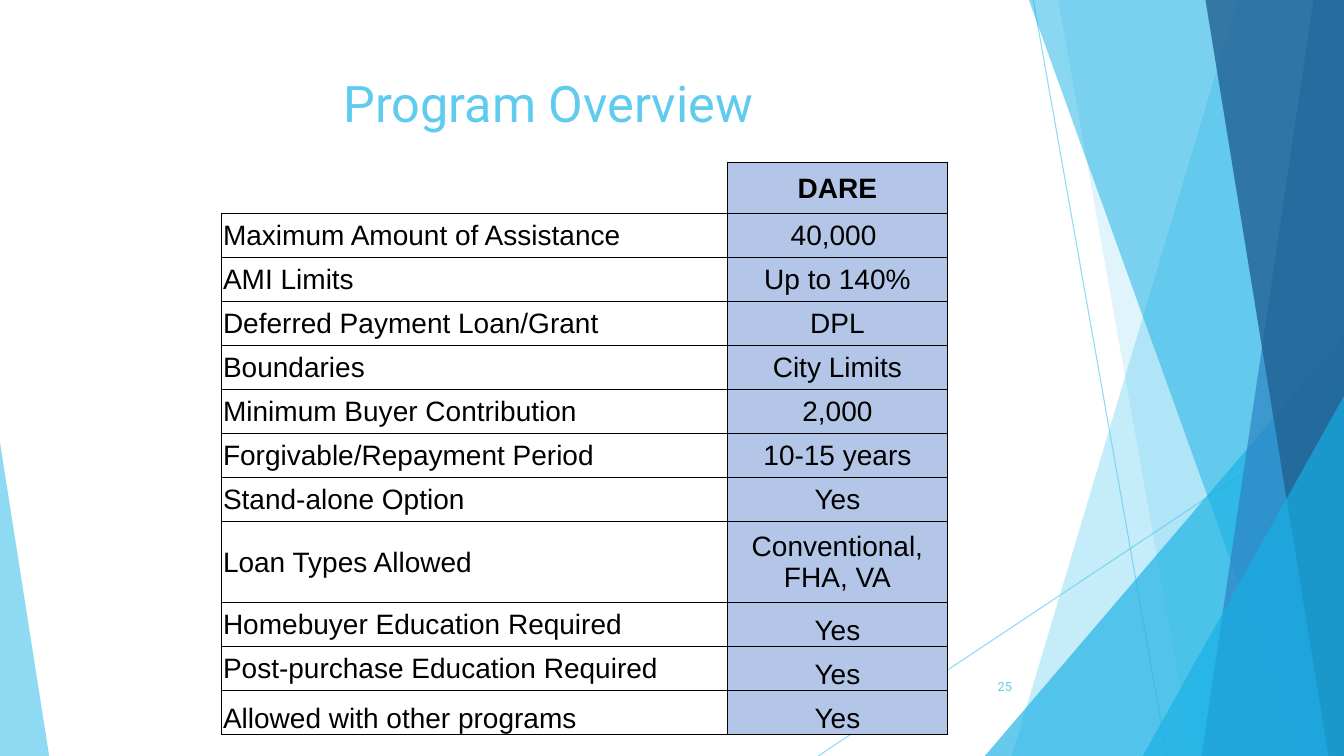
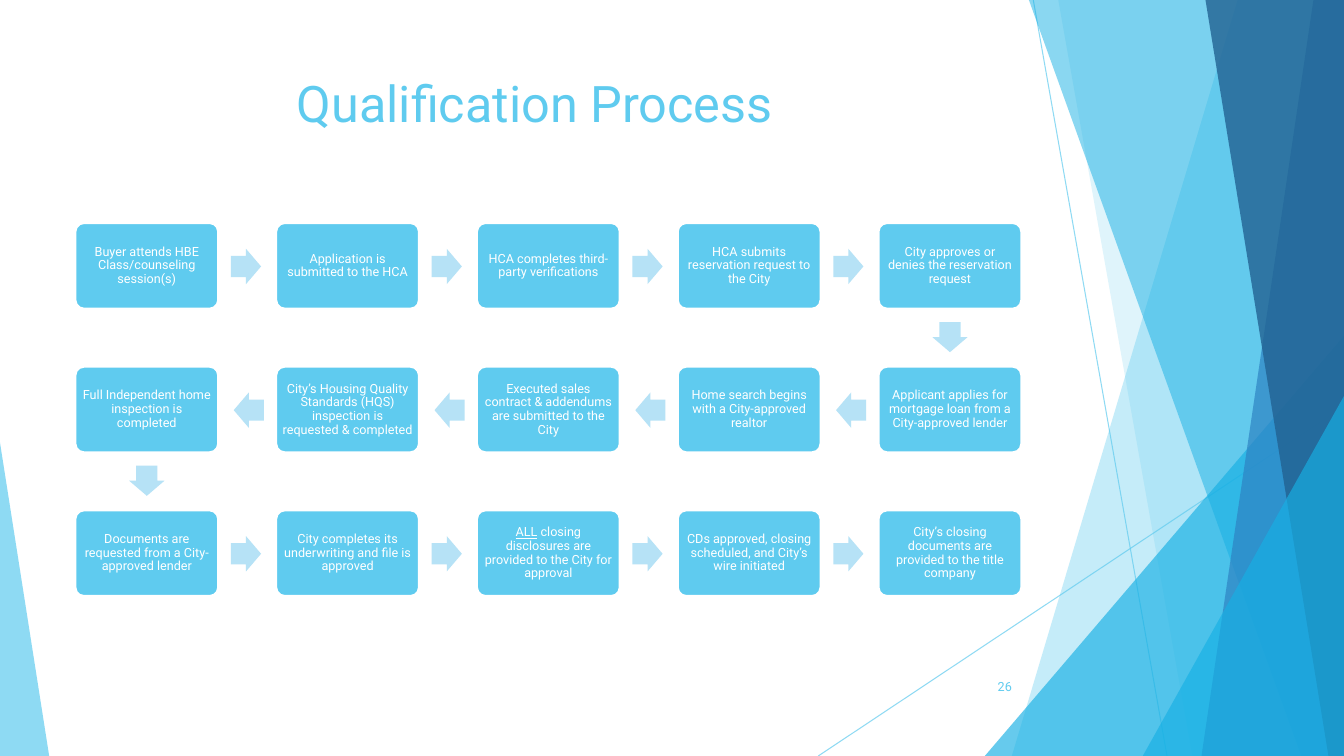
"""Builds the program overview table and the qualification process flow."""
import lxml.etree
import pptx
import pptx.dml.color
import pptx.enum.shapes
import pptx.enum.text
import pptx.oxml.ns
import pptx.util

Cm = pptx.util.Cm
Pt = pptx.util.Pt
RGBColor = pptx.dml.color.RGBColor
SHAPE = pptx.enum.shapes.MSO_SHAPE
ALIGN = pptx.enum.text.PP_ALIGN
ANCHOR = pptx.enum.text.MSO_ANCHOR
qn = pptx.oxml.ns.qn

SKY = RGBColor(0x5F, 0xCB, 0xEF)
CYAN = RGBColor(0x17, 0xB0, 0xE4)
BLUE = RGBColor(0x2E, 0x83, 0xC3)
NAVY = RGBColor(0x22, 0x62, 0x92)
PALE = RGBColor(0xB6, 0xE2, 0xF6)
PERIWINKLE = RGBColor(0xB4, 0xC6, 0xE7)
WHITE = RGBColor(0xFF, 0xFF, 0xFF)
BLACK = RGBColor(0, 0, 0)
WIDTH, HEIGHT = 33.87, 19.05


def paint(shape, color, opacity=100):
    """Give a shape a flat fill without outline or shadow."""
    shape.shadow.inherit = False
    shape.fill.solid()
    shape.fill.fore_color.rgb = color
    shape.line.fill.background()
    if opacity < 100:
        tint = shape.element.spPr.find(".//" + qn("a:srgbClr"))
        lxml.etree.SubElement(tint, qn("a:alpha"), val=str(opacity * 1000))


def write(frame, text, size, color, align, font="Roboto"):
    """Fill a text frame with one styled paragraph and return it."""
    frame.word_wrap = True
    paragraph = frame.paragraphs[0]
    paragraph.alignment = align
    paragraph.font.size = Pt(size)
    paragraph.font.name = font
    paragraph.font.color.rgb = color
    if text.startswith("ALL "):
        paragraph.add_run().text = "ALL"
        paragraph.runs[0].font.underline = True
        text = text[3:]
    paragraph.add_run().text = text
    return paragraph


deck = pptx.Presentation()
deck.slide_width, deck.slide_height = Cm(WIDTH), Cm(HEIGHT)

RAYS = [(26.04, 0, 29.41, HEIGHT), (WIDTH, 10.24, 20.62, HEIGHT)]
FACETS = [
    (31.19, 0, 25.5, SKY, 36),
    (26.67, 0, 30.05, SKY, 20),
    (24.82, 8.46, 24.82, CYAN, 66),
    (25.93, 0, 32.79, CYAN, 50),
    (33.1, 0, 30.28, BLUE, 70),
    (30.38, 0, 33.48, NAVY, 80),
    (28.8, 9.98, 28.8, CYAN, 66),
]
PAGES = [("Program Overview", 1.88, "25"), ("Qualification Process", 1.54, "26")]

for title, title_left, number in PAGES:
    slide = deck.slides.add_slide(deck.slide_layouts[6])
    shapes = slide.shapes
    for ends in RAYS:
        ray = shapes.add_connector(
            pptx.enum.shapes.MSO_CONNECTOR.STRAIGHT, *[Cm(end) for end in ends])
        ray.line.color.rgb = SKY
        ray.line.width = Pt(0.75)
        tint = ray.element.spPr.find(".//" + qn("a:srgbClr"))
        lxml.etree.SubElement(tint, qn("a:alpha"), val="70000")
        lxml.etree.SubElement(ray.element.spPr, qn("a:effectLst"))
    for top_x, top, foot_x, color, opacity in FACETS:
        if top:
            facet = shapes.add_shape(SHAPE.ISOSCELES_TRIANGLE, Cm(foot_x), Cm(top),
                                     Cm(WIDTH - foot_x), Cm(HEIGHT - top))
            facet.adjustments[0] = 1
        else:
            outline = shapes.build_freeform(Cm(top_x), 0)
            outline.add_line_segments([(Cm(WIDTH), 0), (Cm(WIDTH), Cm(HEIGHT)),
                                       (Cm(foot_x), Cm(HEIGHT))])
            facet = outline.convert_to_shape()
        paint(facet, color, opacity)
    wedge = shapes.add_shape(SHAPE.ISOSCELES_TRIANGLE, 0, Cm(11.15),
                             Cm(1.24), Cm(HEIGHT - 11.15))
    wedge.adjustments[0] = 0
    paint(wedge, SKY, 70)

    heading = shapes.add_textbox(Cm(title_left), Cm(1.7), Cm(23.88), Cm(3.66))
    write(heading.text_frame, title, 36, SKY, ALIGN.CENTER)
    page_number = shapes.add_textbox(Cm(23.85), Cm(16.79), Cm(1.9), Cm(1.02))
    write(page_number.text_frame, number, 9, SKY, ALIGN.RIGHT)
    page_number.text_frame.vertical_anchor = ANCHOR.MIDDLE

overview, process = deck.slides

TERMS = [
    ("", "DARE"),
    ("Maximum Amount of Assistance", "40,000 "),
    ("AMI Limits", "Up to 140%"),
    ("Deferred Payment Loan/Grant", "DPL"),
    ("Boundaries", "City Limits"),
    ("Minimum Buyer Contribution", "2,000"),
    ("Forgivable/Repayment Period", "10-15 years"),
    ("Stand-alone Option", "Yes"),
    ("Loan Types Allowed", "Conventional, FHA, VA"),
    ("Homebuyer Education Required", "Yes"),
    ("Post-purchase Education Required", "Yes"),
    ("Allowed with other programs", "Yes"),
]
ROW_HEIGHTS = {0: 1.28, 8: 2.04}
BOTTOM_CELLS = {(9, 1), (10, 1), (11, 0), (11, 1)}

terms_frame = overview.shapes.add_table(
    len(TERMS), 2, Cm(5.59), Cm(4.09), Cm(18.28), Cm(14.42))
terms_frame.element.find(".//" + qn("a:tableStyleId")).text = (
    "{2D5ABB26-0587-4C30-8999-92F81FD0307C}")
terms = terms_frame.table
terms.first_row = terms.horz_banding = False
terms.columns[0].width, terms.columns[1].width = Cm(12.75), Cm(5.53)

for row, texts in enumerate(TERMS):
    terms.rows[row].height = Cm(ROW_HEIGHTS.get(row, 1.11))
    for column, text in enumerate(texts):
        cell = terms.cell(row, column)
        cell.margin_left = cell.margin_right = cell.margin_top = Cm(0.03)
        cell.margin_bottom = 0
        cell.vertical_anchor = (
            ANCHOR.BOTTOM if (row, column) in BOTTOM_CELLS else ANCHOR.MIDDLE)
        for side in "LRTB" if text else "RB":
            border = lxml.etree.SubElement(
                cell._tc.get_or_add_tcPr(), qn("a:ln" + side), w=str(Pt(1)))
            ink = lxml.etree.SubElement(border, qn("a:solidFill"))
            lxml.etree.SubElement(ink, qn("a:srgbClr"), val=str(BLACK))
        if column:
            cell.fill.solid()
            cell.fill.fore_color.rgb = PERIWINKLE
        else:
            cell.fill.background()
        if text:
            entry = write(cell.text_frame, text, 20, BLACK,
                          ALIGN.CENTER if column else ALIGN.LEFT, "Arial")
            entry.font.bold = row == 0

STEPS = [
    "Buyer attends HBE Class/counseling session(s)",
    "Application is submitted to the HCA",
    "HCA completes third-party verifications",
    "HCA submits reservation request to the City",
    "City approves or denies the reservation request",
    "Applicant applies for mortgage loan from a City-approved lender",
    "Home search begins with a City-approved realtor",
    "Executed sales contract & addendums are submitted to the City",
    "City’s Housing Quality Standards (HQS) inspection is requested & completed",
    "Full Independent home inspection is completed",
    "Documents are requested from a City- approved lender",
    "City completes its underwriting and file is approved",
    "ALL closing disclosures are provided to the City for approval",
    "CDs approved, closing scheduled, and City’s wire initiated",
    "City’s closing documents are provided to the title company",
]
PER_ROW = 5

for index, text in enumerate(STEPS):
    row, place = divmod(index, PER_ROW)
    leftward = row % 2 == 1
    column = PER_ROW - 1 - place if leftward else place
    left, top = 1.9 + 5.06 * column, 5.62 + 3.62 * row

    step = process.shapes.add_shape(
        SHAPE.ROUNDED_RECTANGLE, Cm(left), Cm(top), Cm(3.6), Cm(2.16))
    step.adjustments[0] = 0.1
    paint(step, SKY)
    step.line.color.rgb = WHITE
    step.line.width = Pt(1.5)
    label = step.text_frame
    label.margin_left = label.margin_right = Cm(0.1)
    label.margin_top = label.margin_bottom = Cm(0.1)
    label.vertical_anchor = ANCHOR.MIDDLE
    write(label, text, 9, WHITE, ALIGN.CENTER).line_spacing = 0.9

    if index == len(STEPS) - 1:
        break
    if place == PER_ROW - 1:
        shift_x, shift_y, turn = 1.42, 2.43, 90
    elif leftward:
        shift_x, shift_y, turn = -1.07, 0.65, 180
    else:
        shift_x, shift_y, turn = 3.92, 0.65, 0
    arrow = process.shapes.add_shape(
        SHAPE.RIGHT_ARROW, Cm(left + shift_x), Cm(top + shift_y), Cm(0.76), Cm(0.89))
    arrow.adjustments[0], arrow.adjustments[1] = 0.6, 0.5
    arrow.rotation = turn
    paint(arrow, PALE)

deck.save("out.pptx")
